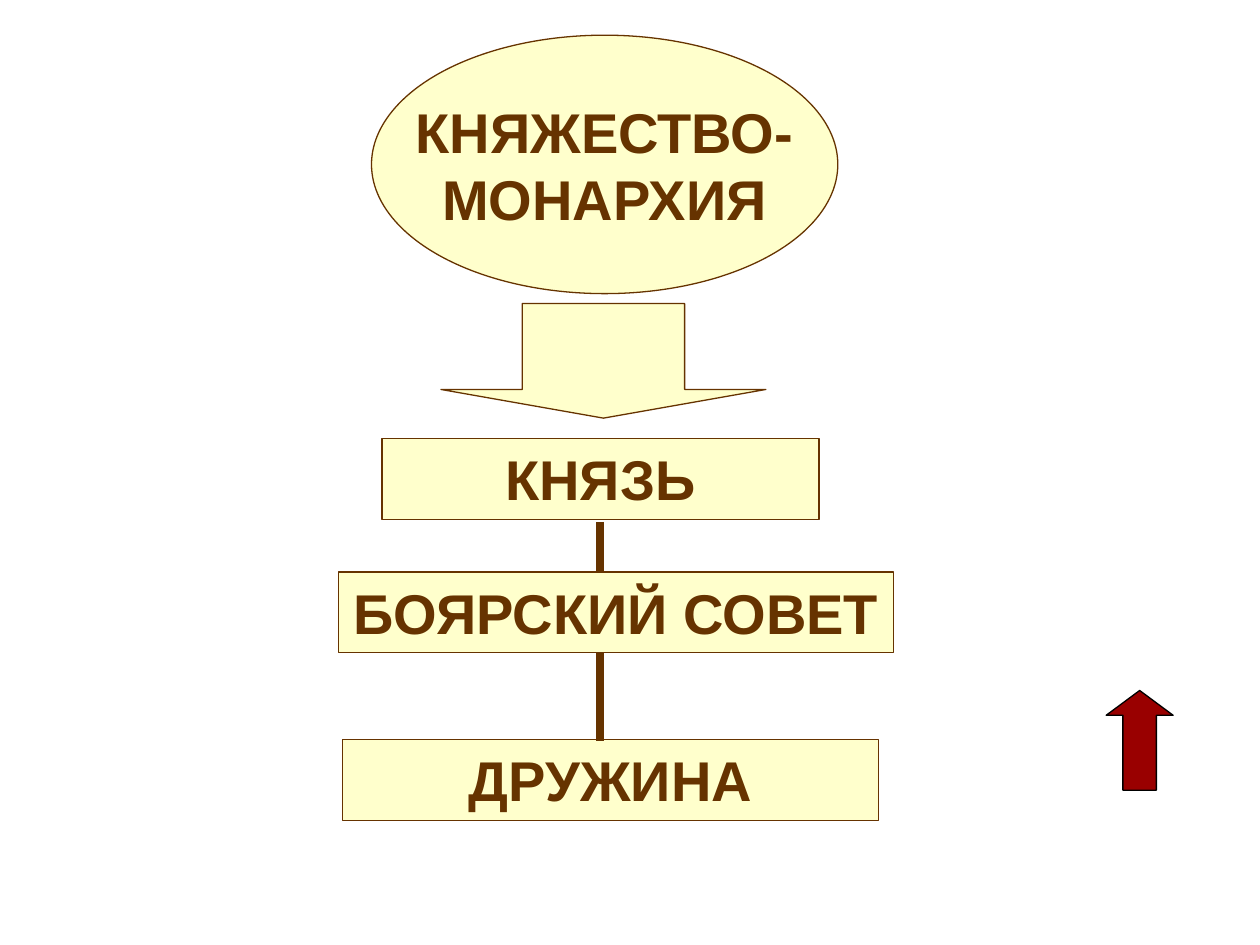
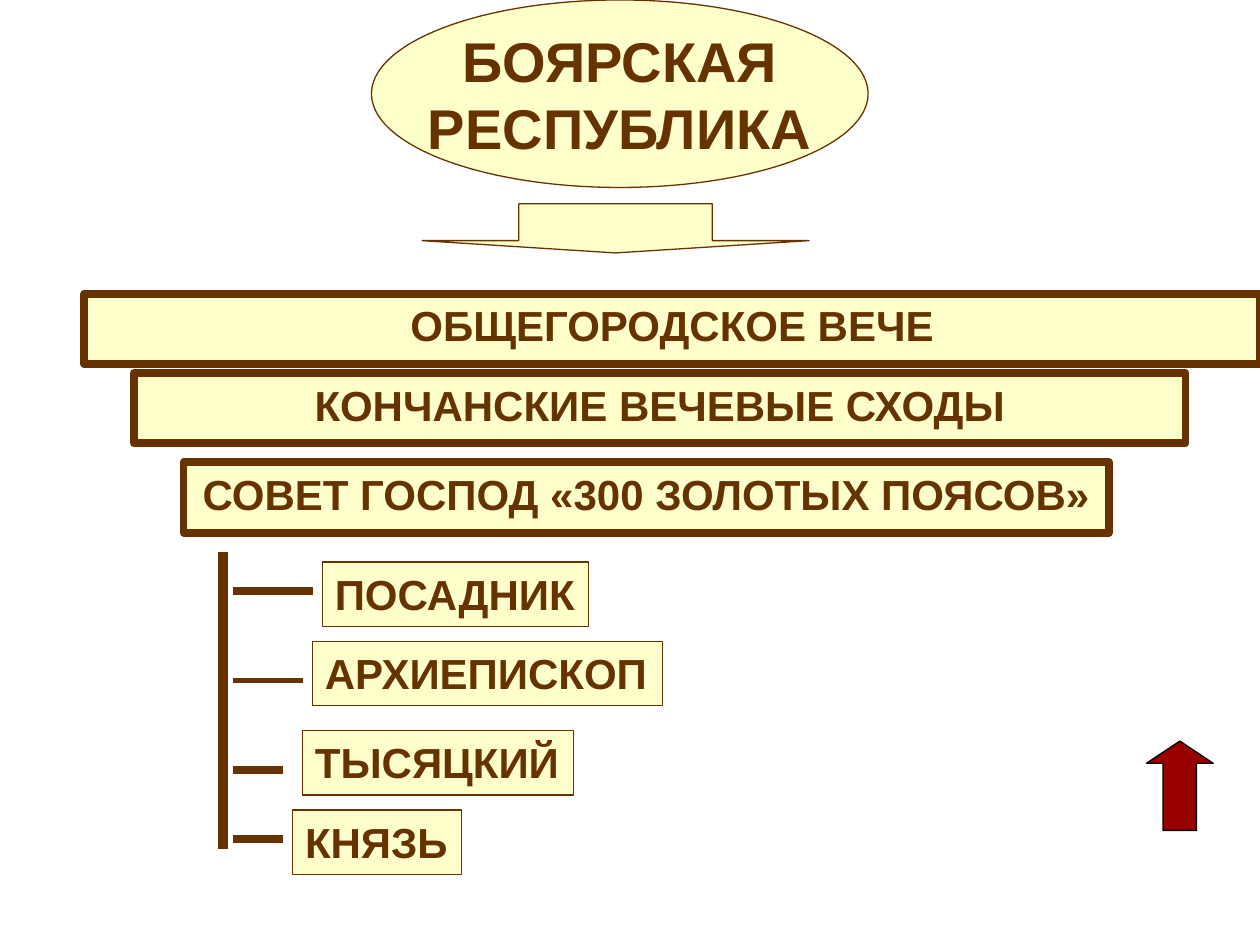
from lxml import etree
from pptx import Presentation, util as u
from pptx.dml.color import RGBColor
from pptx.enum import shapes, text
from pptx.oxml.ns import qn

colours = {"cream": "FFFFCC", "brown": "663300", "red": "990000", "black": "000000"}
kinds = shapes.MSO_SHAPE
left, centre = text.PP_ALIGN.LEFT, text.PP_ALIGN.CENTER

deck = Presentation()
deck.slide_width, deck.slide_height = u.Cm(25.4), u.Cm(19.05)


def add_block(slide, kind, place, lines=(), size=32, border=0.75, wrap=True,
              align=centre, fill="cream", line="brown", adjust=()):
    block = slide.shapes.add_shape(kind, *[u.Cm(v) for v in place])
    block.shadow.inherit = False
    block.fill.solid()
    block.fill.fore_color.rgb = RGBColor.from_string(colours[fill])
    block.line.color.rgb = RGBColor.from_string(colours[line])
    block.line.width = u.Pt(border)
    for i, value in enumerate(adjust):
        block.adjustments[i] = value
    if not lines:
        return
    oval = kind == kinds.OVAL
    frame_format = {
        "word_wrap": wrap,
        "vertical_anchor": text.MSO_ANCHOR.MIDDLE if oval else text.MSO_ANCHOR.TOP,
        "auto_size": text.MSO_AUTO_SIZE.NONE if oval else text.MSO_AUTO_SIZE.SHAPE_TO_FIT_TEXT,
    }
    for name, value in frame_format.items():
        setattr(block.text_frame, name, value)
    block.text_frame.text = "\n".join(lines)
    for paragraph in block.text_frame.paragraphs:
        paragraph.alignment = align
        for name, value in {"name": "Arial", "size": u.Pt(size), "bold": True}.items():
            setattr(paragraph.font, name, value)
        paragraph.font.color.rgb = RGBColor.from_string(colours["brown"])


def add_link(slide, ends, width):
    link = slide.shapes.add_connector(shapes.MSO_CONNECTOR.STRAIGHT, *[u.Cm(v) for v in ends])
    link.line.color.rgb = RGBColor.from_string(colours["brown"])
    link.line.width = u.Pt(width)
    etree.SubElement(link._element.spPr, qn("a:effectLst"))


# Shared parts: form of government, arrow below it, red return arrow
governments = [
    (["КНЯЖЕСТВО-", "МОНАРХИЯ"], (7.49, 0.71, 9.4, 5.21), (8.89, 6.12, 6.55, 2.31),
     (22.3, 13.92, 1.35, 2.01), 0.371),
    (["БОЯРСКАЯ", "РЕСПУБЛИКА"], (7.49, 0, 10.01, 3.78), (8.51, 4.11, 7.8, 0.99),
     (23.11, 14.94, 1.35, 1.8), 0.333),
]
slides = []
for heading, oval_place, down_place, up_place, up_head in governments:
    slide = deck.slides.add_slide(deck.slide_layouts[6])
    add_block(slide, kinds.OVAL, oval_place, heading, wrap=False)
    add_block(slide, kinds.DOWN_ARROW, down_place, adjust=(0.5, 0.25))
    add_block(slide, kinds.UP_ARROW, up_place, fill="red", line="black", adjust=(0.5, up_head))
    slides.append(slide)
monarchy, republic = slides

# Monarchy: chain of power, the council lies over the link
powers = [
    ("КНЯЗЬ", 7.7, 8.84, 8.81, True),
    ("ДРУЖИНА", 6.91, 14.91, 10.8, True),
    ("БОЯРСКИЙ СОВЕТ", 6.83, 11.53, 11.18, False),
]
for power, x, y, width, wrap in powers:
    if power == "БОЯРСКИЙ СОВЕТ":
        add_link(monarchy, (12.09, 10.52, 12.09, 14.94), 4.5)
    add_block(monarchy, kinds.RECTANGLE, (x, y, width, 1.63), [power], wrap=wrap)

# Republic: assemblies
assemblies = [
    ("ОБЩЕГОРОДСКОЕ ВЕЧЕ", 1.7, 5.92, 23.7, True),
    ("КОНЧАНСКИЕ ВЕЧЕВЫЕ СХОДЫ", 2.7, 7.52, 21.2, True),
    ("СОВЕТ ГОСПОД «300 ЗОЛОТЫХ ПОЯСОВ»", 3.7, 9.32, 18.65, False),
]
for assembly, x, y, width, wrap in assemblies:
    add_block(republic, kinds.RECTANGLE, (x, y, width, 1.42), [assembly],
              size=24, border=4.5, wrap=wrap)

# Republic: officials on a common stem, each box 0.2 cm further left
add_link(republic, (4.5, 11.13, 4.5, 17.12), 6)
officials = [
    ("ПОСАДНИК", 11.33, 5.36, 6.3, 11.91, 4.5),
    ("АРХИЕПИСКОП", 12.93, 7.06, 6.1, 13.72, 3),
    ("ТЫСЯЦКИЙ", 14.73, 5.46, 5.7, 15.52, 4.5),
    ("КНЯЗЬ", 16.33, 3.4, 5.7, 16.92, 4.5),
]
for i, (official, y, width, branch_end, branch_y, branch_width) in enumerate(officials):
    add_block(republic, kinds.RECTANGLE, (6.5 - 0.2 * i, y, width, 1.3), [official],
              size=24, wrap=False, align=left)
    add_link(republic, (4.7, branch_y, branch_end, branch_y), branch_width)

deck.save("out.pptx")
